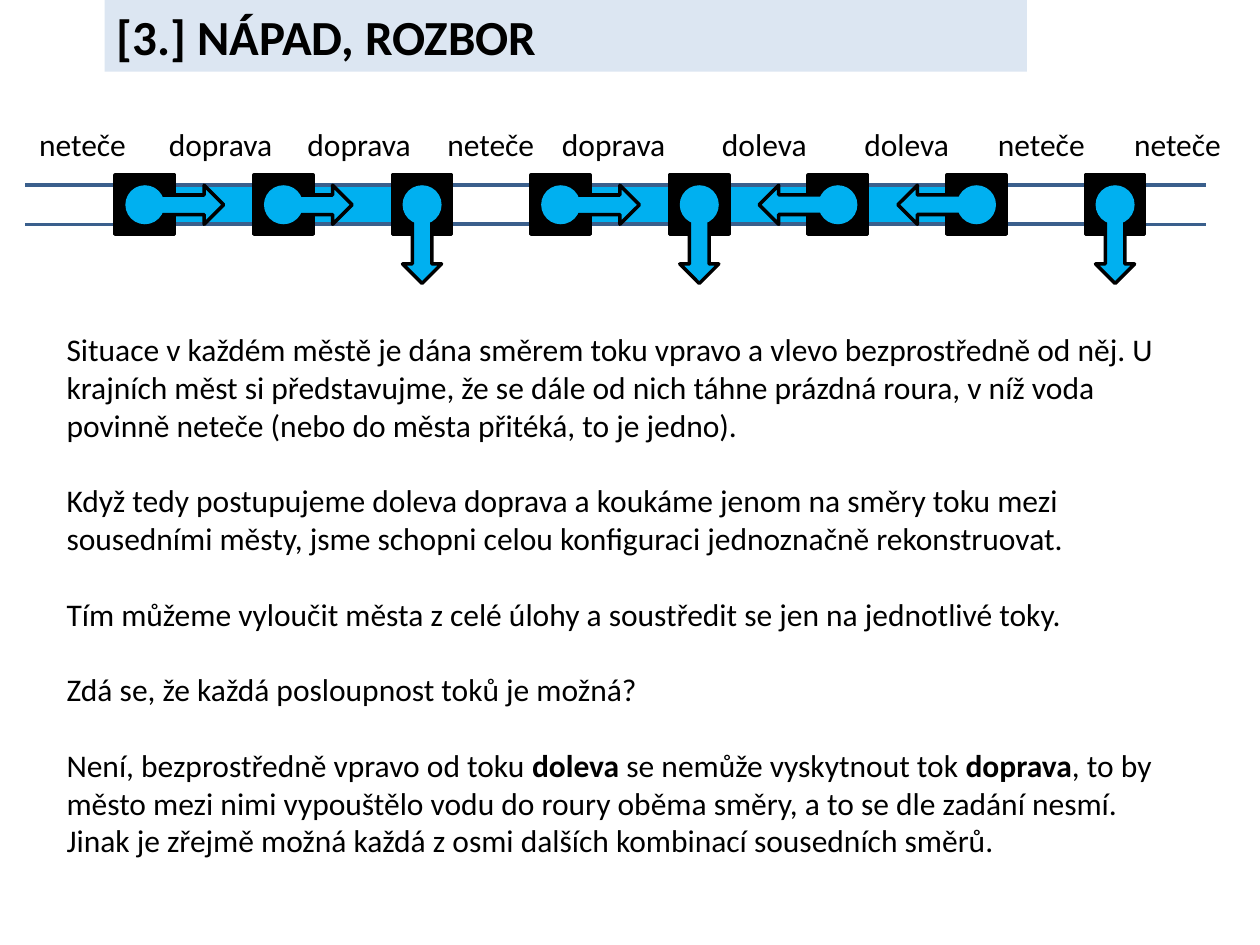
import pptx
import pptx.dml.color
import pptx.enum.shapes
import pptx.enum.text
import pptx.oxml
import pptx.oxml.ns
import pptx.util
from pptx.util import Inches

SHAPE = pptx.enum.shapes.MSO_SHAPE
COLORS = {"water": "00B0F0", "pipe": "3A5F8C", "town": "000000",
          "title": "DCE6F2", "text": "000000"}
PIPE_TOP, PIPE_HEIGHT = 1.47, 0.31
PIPE_MIDDLE = PIPE_TOP + PIPE_HEIGHT / 2
FIRST_TOWN, TOWN_STEP, TOWN_SIZE = 1.15, 1.1, 0.47
ARROW_WIDTH, ARROW_LENGTH, ARROW_END = 0.31, 0.55, 2.25

# left, width, fill
PIPES = [(3.35, 1.18, None), (7.68, 1.34, None),
         (4.45, 3.39, "water"), (0.98, 2.36, "water")]
OPEN_ENDS = [(0.2, 0.98), (8.78, 9.57)]
# direction of the outflow, then arrow offset (sideways) or arrow top (down)
TOWNS = [("right", 0.35), ("right", 0.27), ("down", 1.62), ("right", 0.35),
         ("down", 1.7), ("left", -0.35), ("left", -0.35), ("down", 1.7)]
FLOWS = [("neteče", 0.31), ("doprava", 1.34), ("doprava", 2.44),
         ("neteče", 3.55), ("doprava", 4.46), ("doleva", 5.73),
         ("doleva", 6.86), ("neteče", 7.92), ("neteče", 9.0)]
# every second piece of a paragraph is bold
PARAGRAPHS = [
    ["Situace v každém městě je dána směrem toku vpravo a vlevo bezprostředně "
     "od něj. U krajních měst si představujme, že se dále od nich táhne prázdná "
     "roura, v níž voda povinně neteče (nebo do města přitéká, to je jedno)."],
    ["Když tedy postupujeme doleva doprava a koukáme jenom na směry toku mezi "
     "sousedními městy, jsme schopni celou konfiguraci jednoznačně rekonstruovat."],
    ["Tím můžeme vyloučit města z celé úlohy a soustředit se jen na jednotlivé toky."],
    ["Zdá se, že každá posloupnost toků je možná?"],
    ["Není, bezprostředně vpravo od toku ", "doleva",
     " se nemůže vyskytnout tok ", "doprava",
     ", to by město mezi nimi vypouštělo vodu do roury oběma směry, a to se dle "
     "zadání nesmí. Jinak je zřejmě možná každá z osmi dalších kombinací "
     "sousedních směrů."],
]


def rgb(name):
    return pptx.dml.color.RGBColor.from_string(COLORS[name])


class SlideBuilder:
    """Holds the text style and the slide being filled."""

    def __init__(self, slide, font="Calibri", size=18):
        self.slide, self.font, self.size = slide, font, size

    def shape(self, kind, left, top, width, height, fill=None, line=None, rotation=0):
        shape = self.slide.shapes.add_shape(
            kind, Inches(left), Inches(top), Inches(width), Inches(height))
        shape.shadow.inherit = False
        shape.rotation = rotation
        if fill:
            shape.fill.solid()
            shape.fill.fore_color.rgb = rgb(fill)
        else:
            shape.fill.background()
        if line:
            shape.line.color.rgb = rgb(line)
            shape.line.width = pptx.util.Pt(2)
        else:
            shape.line.fill.background()
        return shape

    def line(self, left, right, y):
        line = self.slide.shapes.add_connector(
            pptx.enum.shapes.MSO_CONNECTOR.STRAIGHT,
            Inches(left), Inches(y), Inches(right), Inches(y))
        line.line.color.rgb = rgb("pipe")
        line.line.width = pptx.util.Pt(2)
        line._element.spPr.append(pptx.oxml.parse_xml(
            f"<a:effectLst {pptx.oxml.ns.nsdecls('a')}/>"))

    def add_spans(self, para, pieces, size=None, bold=False):
        para.alignment = pptx.enum.text.PP_ALIGN.LEFT
        for index, piece in enumerate(pieces):
            span = para.add_run()
            span.text = piece
            span.font.color.rgb = rgb("text")
            style = {"name": self.font, "size": pptx.util.Pt(size or self.size),
                     "bold": bold or index % 2 == 1}
            for name, value in style.items():
                setattr(span.font, name, value)

    def text_box(self, left, top, width, height, paragraphs, gap=0, **frame_format):
        box = self.slide.shapes.add_textbox(
            Inches(left), Inches(top), Inches(width), Inches(height))
        frame = box.text_frame
        for name, value in {"word_wrap": True, **frame_format}.items():
            setattr(frame, name, value)
        for index, pieces in enumerate(paragraphs):
            para = frame.add_paragraph() if index else frame.paragraphs[0]
            para.space_before = pptx.util.Pt(gap if index else 0)
            self.add_spans(para, pieces)
        return box

    def flow_labels(self, flows):
        """Set all labels on one line, each at its own tab stop."""
        start = flows[0][1]
        margins = {f"margin_{side}": 0 for side in ("left", "top", "right", "bottom")}
        box = self.text_box(start, 0.99, 9.69, 0.3,
                            [["\t".join(label for label, _ in flows)]], **margins)
        stops = "".join(f'<a:tab pos="{Inches(left - start)}" algn="l"/>'
                        for _, left in flows[1:])
        box.text_frame.paragraphs[0]._p.get_or_add_pPr().append(pptx.oxml.parse_xml(
            f"<a:tabLst {pptx.oxml.ns.nsdecls('a')}>{stops}</a:tabLst>"))

    def town(self, center, direction, place):
        self.shape(SHAPE.RECTANGLE, center - TOWN_SIZE / 2, PIPE_MIDDLE - TOWN_SIZE / 2,
                   TOWN_SIZE, TOWN_SIZE, "town", "town")
        if direction == "down":
            middle, top, length, rotation = center, place, ARROW_END - place, 0
        else:
            middle, length = center + place, ARROW_LENGTH
            top = PIPE_MIDDLE - length / 2
            rotation = {"left": 90, "right": 270}[direction]
        self.shape(SHAPE.DOWN_ARROW, middle - ARROW_WIDTH / 2, top, ARROW_WIDTH,
                   length, "water", "town", rotation)
        self.shape(SHAPE.OVAL, center - PIPE_HEIGHT / 2, PIPE_TOP,
                   PIPE_HEIGHT, PIPE_HEIGHT, "water")


def main():
    deck = pptx.Presentation()
    deck.slide_width, deck.slide_height = Inches(10), Inches(7.5)
    builder = SlideBuilder(deck.slides.add_slide(deck.slide_layouts[6]))

    for left, right in OPEN_ENDS:
        for y in (PIPE_TOP + PIPE_HEIGHT, PIPE_TOP):
            builder.line(left, right, y)
    title = builder.shape(SHAPE.RECTANGLE, 0.83, 0, 7.32, 0.57, "title")
    builder.add_spans(title.text_frame.paragraphs[0], ["[3.] NÁPAD, ROZBOR"], 28, True)
    for left, width, fill in PIPES:
        builder.shape(SHAPE.RECTANGLE, left, PIPE_TOP, width, PIPE_HEIGHT, fill, "pipe")
    for index, (direction, place) in enumerate(TOWNS):
        builder.town(FIRST_TOWN + index * TOWN_STEP, direction, place)
    builder.flow_labels(FLOWS)
    builder.text_box(0.43, 2.57, 8.9, 4.34, PARAGRAPHS, gap=21.6)
    deck.save("out.pptx")


if __name__ == "__main__":
    main()
